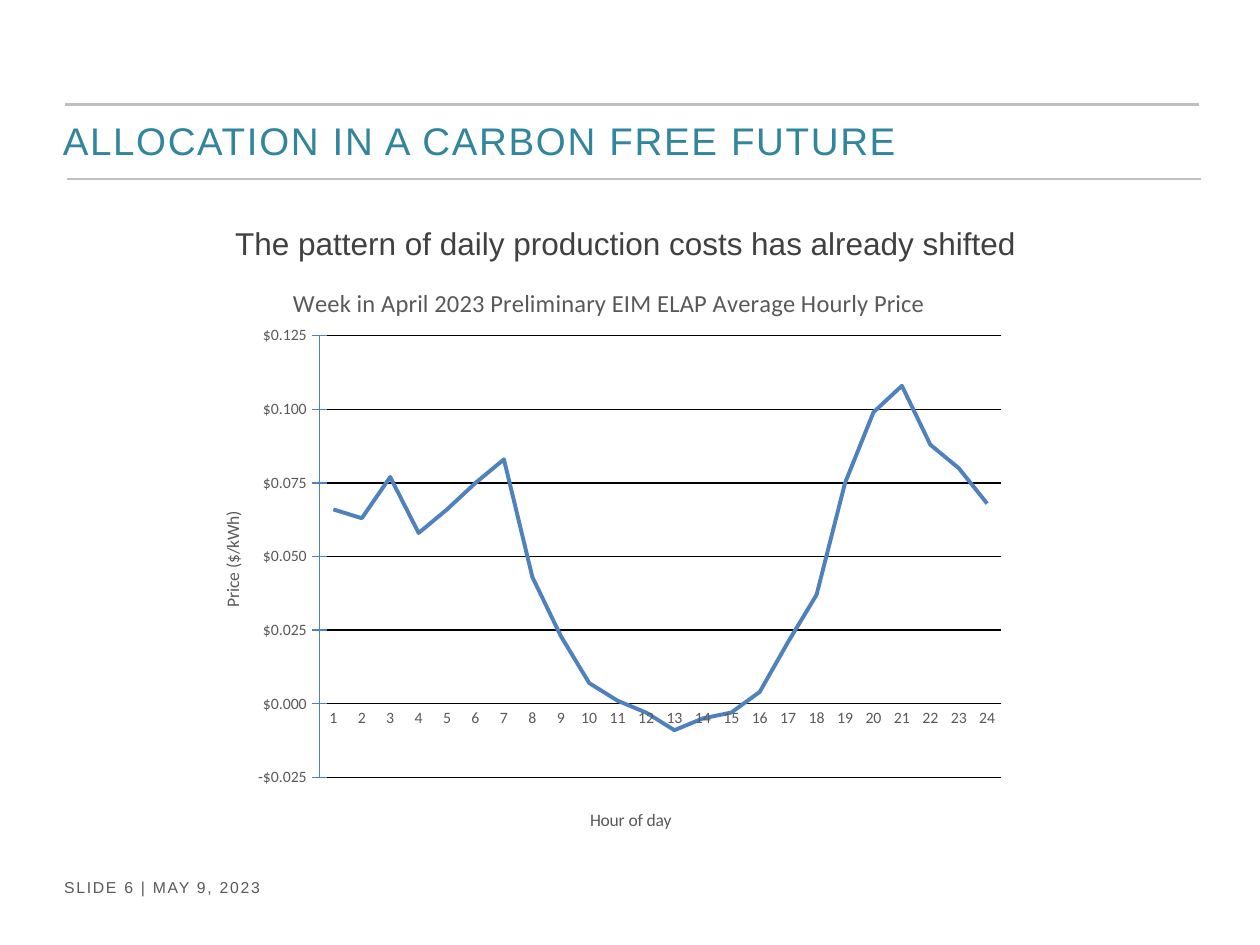
from dataclasses import dataclass

from lxml.etree import SubElement
from pptx import Presentation
from pptx.chart.data import CategoryChartData
from pptx.dml.color import RGBColor
from pptx.enum.chart import XL_CHART_TYPE as ChartType, XL_TICK_MARK as TickMark
from pptx.enum.shapes import MSO_CONNECTOR as Connector
from pptx.enum.text import MSO_ANCHOR as Anchor, PP_ALIGN as Align
from pptx.oxml import parse_xml
from pptx.oxml.ns import nsdecls, qn
from pptx.util import Inches, Pt

COLOURS = {
    "rule": "BFBFBF",
    "heading": "31859C",
    "body": "404040",
    "muted": "595959",
    "price": "4F81BD",
    "grid": "000000",
}
HOURLY_PRICES = (
    0.066, 0.063, 0.077, 0.058, 0.066, 0.075, 0.083, 0.043,
    0.023, 0.007, 0.001, -0.003, -0.009, -0.005, -0.003, 0.004,
    0.021, 0.037, 0.075, 0.099, 0.108, 0.088, 0.08, 0.068,
)
PRICE_FORMAT = '"$"#,##0.000'


@dataclass(frozen=True)
class Label:
    text: str
    box: tuple[float, float, float, float]
    size: float
    colour: str
    spacing: int = 0  # hundredths of a point
    align: Align = Align.LEFT
    anchor: Anchor = Anchor.TOP
    line_spacing: float = 1.0


@dataclass(frozen=True)
class Rule:
    left: float
    top: float
    width: float = 9.0


LABELS = (
    Label("SLIDE 6 | MAY 9, 2023", (0.41, 6.92, 2.68, 0.25), 9, "muted", spacing=100),
    Label("ALLOCATION IN A CARBON FREE FUTURE", (0.4, 0.82, 9.1, 0.58), 22, "heading",
          spacing=100, anchor=Anchor.MIDDLE),
    Label("The pattern of daily production costs has already shifted",
          (0.42, 1.67, 9.09, 4.75), 18, "body", align=Align.CENTER, line_spacing=1.2),
)
RULES = (Rule(0.52, 0.83), Rule(0.53, 1.42))


def rgb(name: str) -> RGBColor:
    return RGBColor.from_string(COLOURS[name])


def style_line(line, colour: str, width: float) -> None:
    line.color.rgb = rgb(colour)
    line.width = Pt(width)


def style_font(font, size: float, colour: str, face: str) -> None:
    font.size, font.name, font.bold = Pt(size), face, False
    font.color.rgb = rgb(colour)


def add_label(slide, label: Label) -> None:
    frame = slide.shapes.add_textbox(*map(Inches, label.box)).text_frame
    frame.word_wrap = True
    frame.vertical_anchor = label.anchor
    paragraph = frame.paragraphs[0]
    run = paragraph.add_run()
    run.text = label.text
    if label.spacing:
        run.font._element.set("spc", str(label.spacing))
    paragraph.alignment = label.align
    paragraph.line_spacing = label.line_spacing
    style_font(paragraph.font, label.size, label.colour, "Arial")


def add_rule(slide, rule: Rule) -> None:
    line = slide.shapes.add_connector(
        Connector.STRAIGHT, Inches(rule.left), Inches(rule.top),
        Inches(rule.left + rule.width), Inches(rule.top))
    style_line(line.line, "rule", 1.5)
    SubElement(line._element.spPr, qn("a:effectLst"))


def place(element, index: int, **fractions: float) -> None:
    """Give a chart part a manual layout in fractions of the chart frame."""
    for old in element.findall(qn("c:layout")):
        element.remove(old)
    layout = parse_xml(f"<c:layout {nsdecls('c')}><c:manualLayout/></c:layout>")
    inner = "w" in fractions
    settings = {"layoutTarget": "inner"} if inner else {}
    settings |= {"xMode": "edge", "yMode": "edge"} | fractions
    for tag, value in settings.items():
        SubElement(layout[0], qn(f"c:{tag}")).set("val", str(value))
    element.insert(index, layout)


def set_title(title, text: str, size: float, x: float, y: float) -> None:
    title.text_frame.text = text
    style_font(title.text_frame.paragraphs[0].font, size, "muted", "Calibri")
    place(title._element, 1, x=x, y=y)


def add_price_chart(slide) -> None:
    prices = CategoryChartData(number_format=PRICE_FORMAT)
    prices.categories = [str(hour) for hour in range(1, len(HOURLY_PRICES) + 1)]
    prices.add_series("Series 1", HOURLY_PRICES)
    chart = slide.shapes.add_chart(
        ChartType.LINE, Inches(1.5), Inches(2), Inches(6.58), Inches(4.75), prices).chart
    style_font(chart.font, 10, "grid", "Calibri")
    chart.has_legend = False
    chart.has_title = True
    set_title(chart.chart_title,
              "Week in April 2023 Preliminary EIM ELAP Average Hourly Price", 14, 0.12, 0.05)
    place(chart._chartSpace.chart.plotArea, 0, x=0.157, y=0.14, w=0.823, h=0.738)

    plot = chart.plots[0]
    plot.vary_by_categories = False
    series = plot.series[0]
    series.smooth = False
    style_line(series.format.line, "price", 2.25)

    hours, price_axis = chart.category_axis, chart.value_axis
    for axis in (hours, price_axis):
        style_font(axis.tick_labels.font, 9, "muted", "Calibri")
        axis.minor_tick_mark = TickMark.NONE
    set_title(hours.axis_title, "Hour of day", 10, 0.48, 0.925)
    hours.major_tick_mark = TickMark.NONE
    hours.format.line.fill.background()

    set_title(price_axis.axis_title, "Price ($/kWh)", 10, 0.035, 0.428)
    body = price_axis.axis_title.text_frame._txBody.bodyPr
    body.set("rot", "-5400000")
    body.set("vert", "horz")
    price_axis.minimum_scale, price_axis.maximum_scale = -0.025, 0.125
    price_axis.major_unit = 0.025
    price_axis.major_tick_mark = TickMark.CROSS
    price_axis.tick_labels.number_format = PRICE_FORMAT
    price_axis.tick_labels.number_format_is_linked = False
    style_line(price_axis.format.line, "price", 0.75)
    style_line(price_axis.major_gridlines.format.line, "grid", 0.75)


def main() -> None:
    deck = Presentation()
    deck.slide_width, deck.slide_height = Inches(10), Inches(7.5)
    slide = deck.slides.add_slide(deck.slide_layouts[6])
    for rule in RULES:
        add_rule(slide, rule)
    for label in LABELS:
        add_label(slide, label)
    add_price_chart(slide)
    deck.save("out.pptx")


if __name__ == "__main__":
    main()
